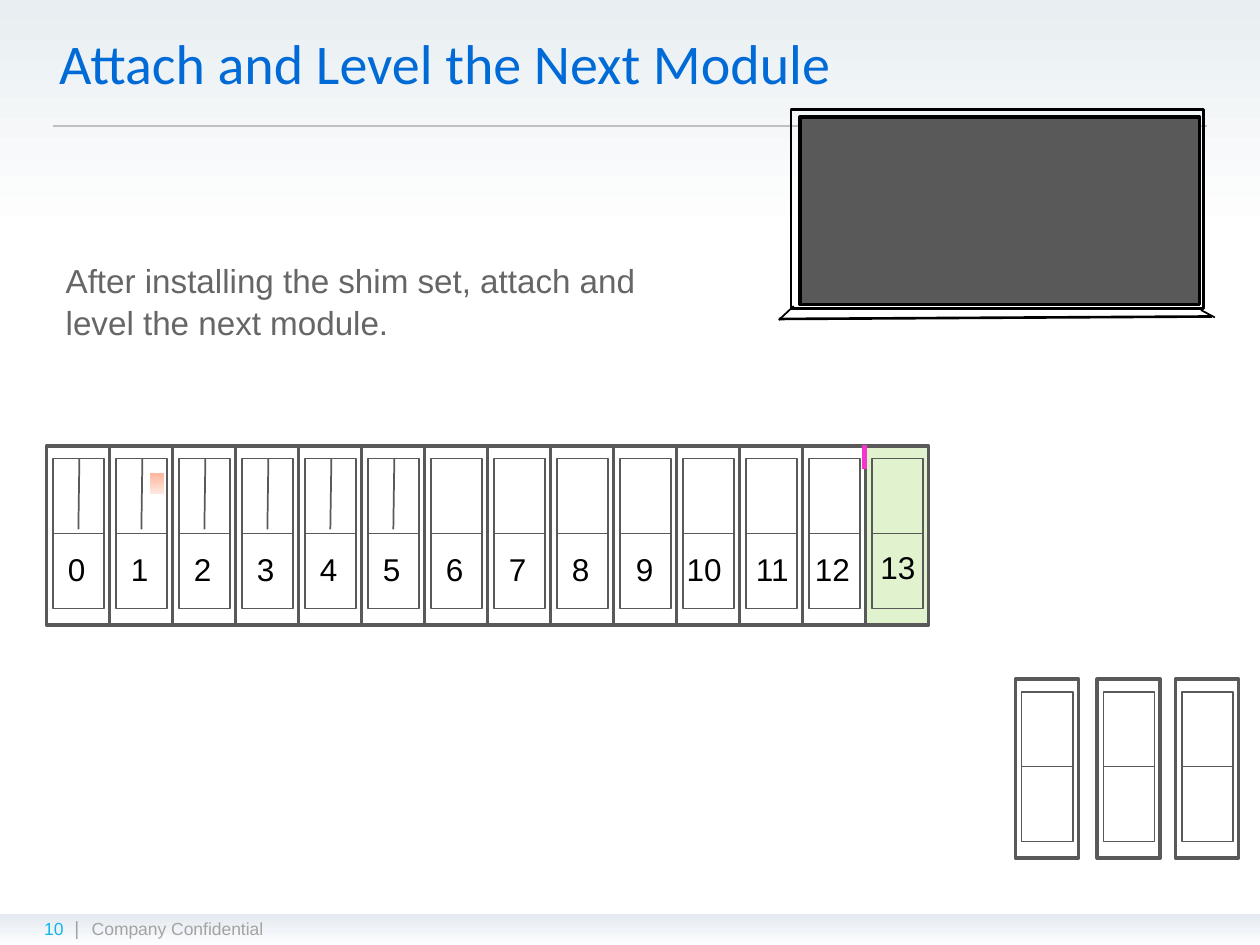
"""Build the slide on attaching and levelling the next module."""
from lxml import etree
from pptx import Presentation
from pptx.dml.color import RGBColor
from pptx.enum.shapes import MSO_CONNECTOR, MSO_SHAPE
from pptx.enum.text import MSO_ANCHOR, MSO_AUTO_SIZE, PP_ALIGN
from pptx.oxml.ns import qn
from pptx.util import Cm, Pt

RECT = MSO_SHAPE.RECTANGLE
STRAIGHT = MSO_CONNECTOR.STRAIGHT
LEFT = PP_ALIGN.LEFT
TOP, MIDDLE = MSO_ANCHOR.TOP, MSO_ANCHOR.MIDDLE
NO_FIT = MSO_AUTO_SIZE.NONE

BLACK = RGBColor(0x00, 0x00, 0x00)
DARK = RGBColor(0x59, 0x59, 0x59)
BODY_GREY = RGBColor(0x66, 0x66, 0x66)
FOOTER_GREY = RGBColor(0xA3, 0xA3, 0xA3)
RULE_GREY = RGBColor(0xBF, 0xBF, 0xBF)
TITLE_BLUE = RGBColor(0x00, 0x6A, 0xD6)
PAGE_BLUE = RGBColor(0x0D, 0xB6, 0xEC)
GREEN = RGBColor(0x92, 0xD0, 0x50)
PINK = RGBColor(0xF5, 0x35, 0xCC)
HEADER_GRADIENT = RGBColor(0xE8, 0xEE, 0xF1), RGBColor(0xFF, 0xFF, 0xFF)
FOOTER_GRADIENT = RGBColor(0xE3, 0xE9, 0xEF), RGBColor(0xFD, 0xFE, 0xFF)
CHIP_GRADIENT = RGBColor(0xFF, 0xB5, 0x99), RGBColor(0xFF, 0xE8, 0xE1)

MODULE_LEFT, MODULE_TOP, MODULE_WIDTH = 0.94, 8.99, 1.27
MODULE_COUNT, SLOTTED_COUNT = 14, 6
LABEL_OFFSETS = [0.18] * 9 + [0.2, -0.05, 0.08, 0, 0.05]


def add_box(x, y, w, h, color=None, width=0):
    box = s.shapes.add_shape(RECT, Cm(x), Cm(y), Cm(w), Cm(h))
    box.shadow.inherit = False
    box.fill.background()
    if color is None:
        box.line.fill.background()
    else:
        box.line.color.rgb = color
        box.line.width = Pt(width)
    return box


def add_line(x1, y1, x2, y2, color, width):
    line = s.shapes.add_connector(STRAIGHT, Cm(x1), Cm(y1), Cm(x2), Cm(y2))
    line.line.color.rgb = color
    line.line.width = Pt(width)
    etree.SubElement(line._element.spPr, qn("a:effectLst"))


prs = Presentation()
prs.slide_width, prs.slide_height = Cm(25.4), Cm(19.05)
s = prs.slides.add_slide(prs.slide_layouts[1])

footer_bar = add_box(0, 18.42, 25.4, 0.63)
chip = add_box(3.02, 9.53, 0.28, 0.43)
for fill, colors, end in [
    (s.background.fill, HEADER_GRADIENT, 0.25),
    (footer_bar.fill, FOOTER_GRADIENT, 1),
    (chip.fill, CHIP_GRADIENT, 1),
]:
    fill.gradient()
    fill.gradient_angle = 270
    for stop, color, position in zip(fill.gradient_stops, colors, (0, end)):
        stop.color.rgb = color
        stop.position = position

add_line(1.07, 2.54, 24.33, 2.54, RULE_GREY, 0.75)

title, body = s.shapes.title, s.placeholders[1]
for sp, text, x, y, w, h, font, size, color, anchor in [
    (title, "Attach and Level the Next Module",
     0.94, 0.43, 22.91, 1.63, "Calibri", 32, TITLE_BLUE, MIDDLE),
    (body, "After installing the shim set, attach and level the next module.",
     1.07, 5.08, 12.7, 1.88, "Arial", 19, BODY_GREY, TOP),
]:
    sp.left, sp.top, sp.width, sp.height = Cm(x), Cm(y), Cm(w), Cm(h)
    tf = sp.text_frame
    tf.text = text
    tf.word_wrap = True
    tf.auto_size = NO_FIT
    tf.vertical_anchor = anchor
    p = tf.paragraphs[0]
    p.alignment = LEFT
    p.space_before = Pt(0)
    r = p.runs[0]
    r.font.name, r.font.size, r.font.color.rgb = font, Pt(size), color

p = body.text_frame.paragraphs[0]
p.line_spacing = 1.05
pPr = p._p.get_or_add_pPr()
pPr.set("marL", "0")
pPr.set("indent", "0")
etree.SubElement(pPr, qn("a:buNone"))

row = [(MODULE_LEFT + i * MODULE_WIDTH, MODULE_TOP) for i in range(MODULE_COUNT)]
spares = [(x, 13.69) for x in (20.47, 22.12, 23.7)]
for i, (x, y) in enumerate(row + spares):
    module = add_box(x, y, MODULE_WIDTH, 3.61, DARK, 2)
    if i == MODULE_COUNT - 1:
        module.fill.solid()
        module.fill.fore_color.rgb = GREEN
        rgb = module._element.spPr.find(qn("a:solidFill"))[0]
        etree.SubElement(rgb, qn("a:alpha"), val="27000")
    add_box(x + 0.13, y + 0.26, 1.03, 3.02, DARK, 0.75)
    add_line(x + 0.13, y + 1.76, x + 1.16, y + 1.76, DARK, 0.75)
    if i < SLOTTED_COUNT:
        add_line(x + 0.66, y + 0.26, x + 0.64, y + 1.68, DARK, 1)

add_line(17.42, 8.97, 17.42, 9.45, PINK, 3)

add_box(15.95, 2.21, 8.31, 4.01, BLACK, 1.5)
add_line(15.7, 6.43, 24.43, 6.38, BLACK, 1.5)
add_line(15.7, 6.45, 16, 6.17, BLACK, 1)
add_line(24.21, 6.25, 24.49, 6.4, BLACK, 1)
screen = add_box(16.13, 2.36, 8.05, 3.78, BLACK, 2)
screen.fill.solid()
screen.fill.fore_color.rgb = DARK

texts = [
    ("Company Confidential", 1.6, 18.39, 12.7, 10, FOOTER_GREY),
    ("|", 1.27, 18.34, 0.48, 11, FOOTER_GREY),
    ("10", 0.64, 18.39, 1.3, 10, PAGE_BLUE),
]
for i, ((x, y), offset) in enumerate(zip(row, LABEL_OFFSETS)):
    top = 10.92 if i == MODULE_COUNT - 1 else 10.97
    texts.append((str(i), x + offset, top, 0.86 if i < 10 else 1.22, 18, BLACK))

for text, x, y, w, size, color in texts:
    tf = s.shapes.add_textbox(Cm(x), Cm(y), Cm(w), Cm(1.02 if size == 18 else 0.69)).text_frame
    tf.text = text
    tf.word_wrap = w > 2
    r = tf.paragraphs[0].runs[0]
    r.font.name, r.font.size, r.font.color.rgb = "Arial", Pt(size), color

prs.save("out.pptx")
